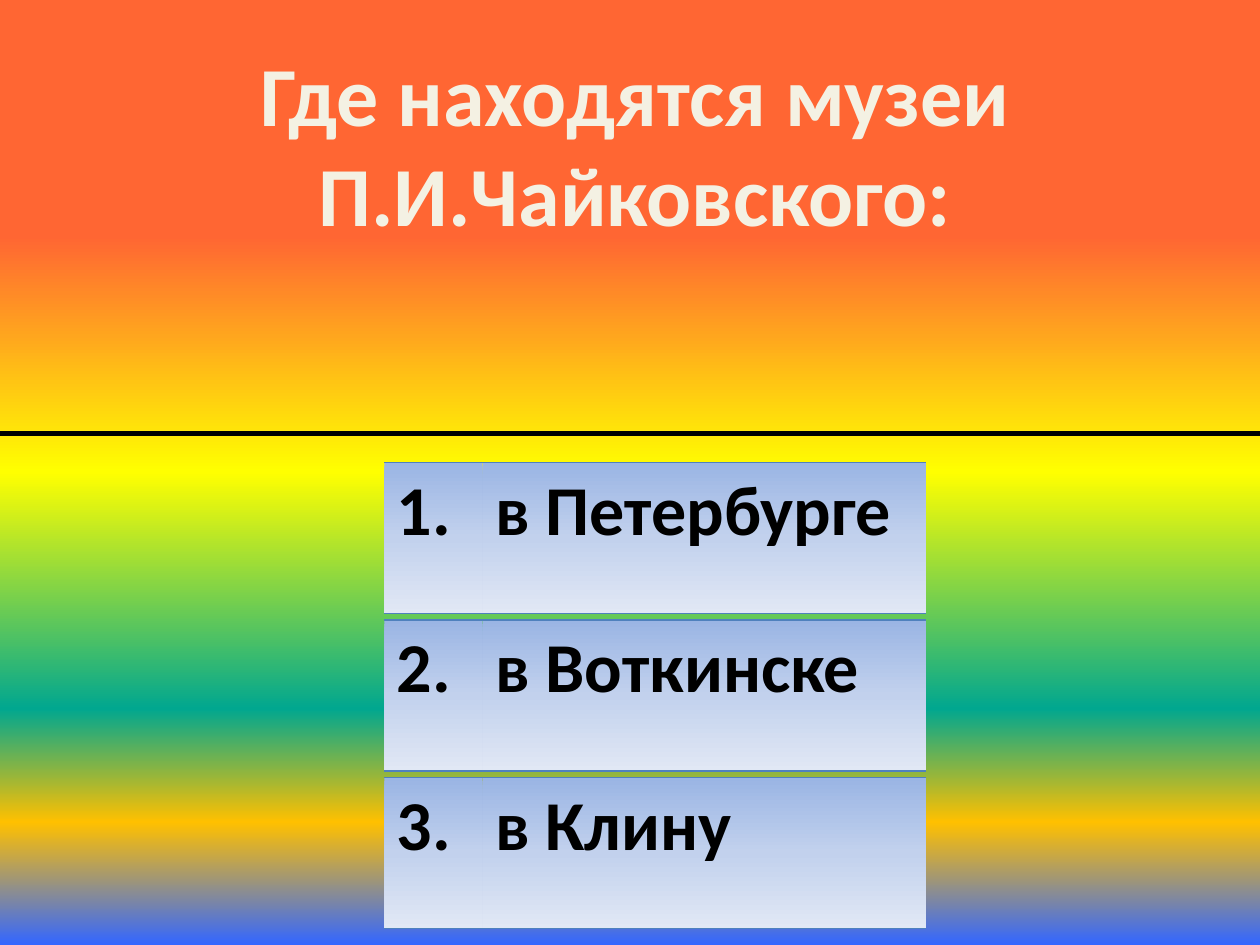
from lxml.etree import SubElement
from pptx import Presentation
from pptx.dml.color import RGBColor
from pptx.enum.shapes import MSO_CONNECTOR
from pptx.enum.text import MSO_ANCHOR, PP_ALIGN
from pptx.oxml.ns import qn
from pptx.util import Inches, Pt

HUES = {
    "title": "F4F1E3", "edge": "054697", "text": "000000",
    "border": "4F81BD", "line": "000000",
}
SKY = [(0, "FF6633"), (25, "FF6633"), (50, "FFFF00"), (75, "01A78F"),
       (87, "FFC000"), (100, "3366FF")]
PANEL = [(0, "9AB5E4"), (50, "C2D1ED"), (100, "E1E8F5")]
ANSWERS = ["в Петербурге", "в Воткинске", "в Клину"]


def set_text(frame, text, size, color, align=PP_ALIGN.LEFT):
    para = frame.paragraphs[0]
    para.alignment = align
    run = para.add_run()
    run.text = text
    run.font.name = "Calibri"
    run.font.size = Pt(size)
    run.font.bold = True
    run.font.color.rgb = RGBColor.from_string(HUES[color])
    return run


def set_blend(fill, node, stops):
    """Give a fill, held in the XML node, a top-down gradient."""
    fill.gradient()
    fill.gradient_angle = 270
    group = next(node.iter(qn("a:gsLst")))
    for old in list(group):
        group.remove(old)
    for pos, color in stops:
        stop = SubElement(group, qn("a:gs"), pos=str(pos * 1000))
        SubElement(stop, qn("a:srgbClr"), val=color)


def add_edge(node, tag, color=None):
    """Append a 1 pt outline, or an empty one when no color is given."""
    edge = SubElement(node, qn(tag), w=str(Pt(1)))
    if color:
        solid = SubElement(edge, qn("a:solidFill"))
        SubElement(solid, qn("a:srgbClr"), val=HUES[color])
    else:
        SubElement(edge, qn("a:noFill"))
    return edge


def add_title(slide, left, top, width, height):
    title = slide.shapes.title
    title.left, title.top = left, top
    title.width, title.height = width, height
    frame = title.text_frame
    frame.word_wrap = True
    frame.vertical_anchor = MSO_ANCHOR.MIDDLE
    run = set_text(frame, "Где находятся музеи П.И.Чайковского:",
                   48, "title", PP_ALIGN.CENTER)
    props = run.font._element
    props.insert(0, add_edge(props, "a:ln", "edge"))


def add_rule(slide, left, top, width):
    rule = slide.shapes.add_connector(
        MSO_CONNECTOR.STRAIGHT, left, top, left + width, top)
    rule.line.width = Pt(2.5)
    rule.line.color.rgb = RGBColor.from_string(HUES["line"])
    SubElement(rule._element.spPr, qn("a:effectLst"))


def add_answer(slide, number, text, left, top, width, height):
    table = slide.shapes.add_table(1, 2, left, top, width, height).table
    table.first_row = table.horz_banding = False
    table.columns[0].width = Inches(0.78)
    table.columns[1].width = width - Inches(0.78)
    for cell, words in zip(table.rows[0].cells, (f"{number}.", text)):
        set_text(cell.text_frame, words, 40, "text")
        props = cell._tc.get_or_add_tcPr()
        for tag, color in (("a:lnL", None), ("a:lnR", None),
                           ("a:lnT", "border"), ("a:lnB", "border")):
            add_edge(props, tag, color)
        set_blend(cell.fill, props, PANEL)


def add_answers(slide, left, top, width, height, step):
    for i, text in enumerate(ANSWERS):
        add_answer(slide, i + 1, text, left, top + i * step, width, height)


def main():
    deck = Presentation()
    deck.slide_width, deck.slide_height = Inches(10), Inches(7.5)
    slide = deck.slides.add_slide(deck.slide_layouts[5])
    set_blend(slide.background.fill, slide._element, SKY)
    add_title(slide, Inches(0.39), Inches(0.16), Inches(9.3), Inches(1.95))
    add_answers(slide, Inches(3.05), Inches(3.67), Inches(4.3),
                Inches(1.2), step=Inches(1.25))
    add_rule(slide, Inches(0), Inches(3.44), Inches(10))
    deck.save("out.pptx")


if __name__ == "__main__":
    main()
